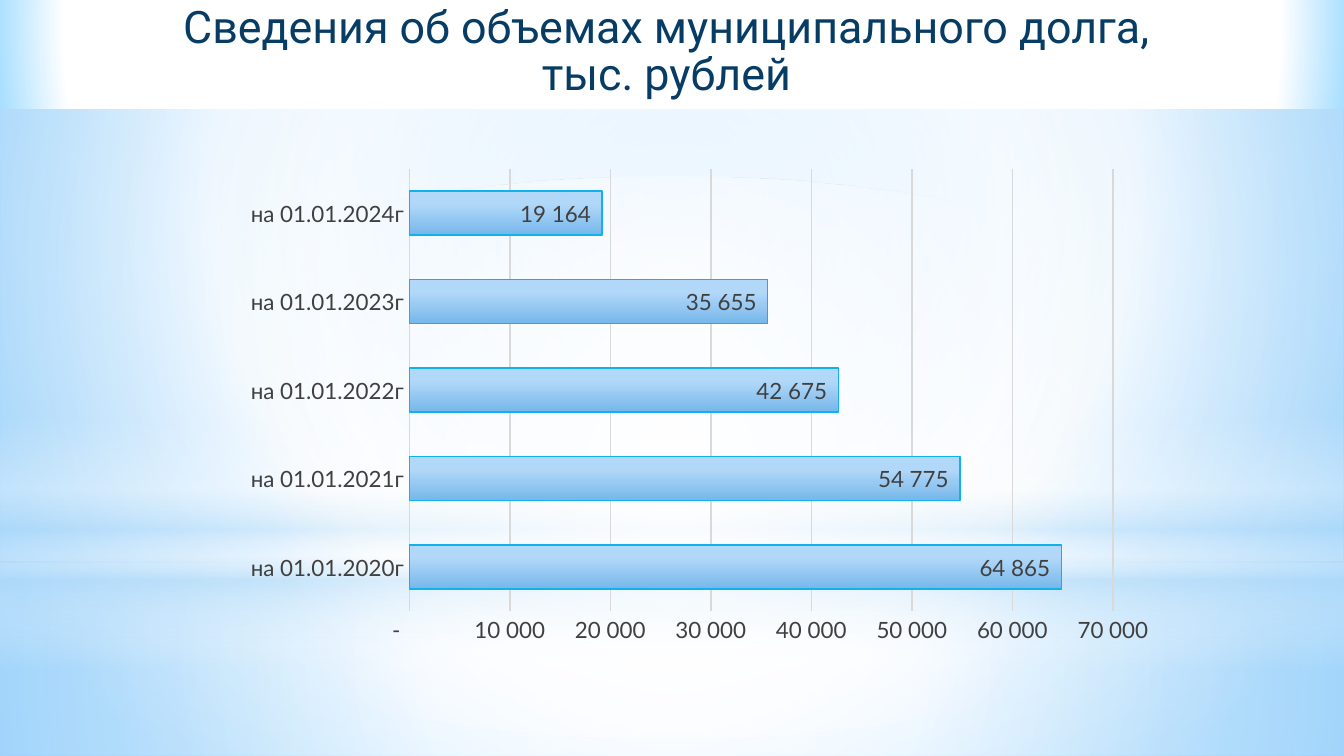
from lxml import etree
from pptx import Presentation
from pptx.chart.data import CategoryChartData
from pptx.dml.color import RGBColor
from pptx.enum.chart import XL_CHART_TYPE, XL_LABEL_POSITION, XL_TICK_MARK
from pptx.enum.shapes import MSO_SHAPE
from pptx.enum.text import MSO_ANCHOR, MSO_AUTO_SIZE, PP_ALIGN
from pptx.oxml import parse_xml
from pptx.oxml.ns import nsdecls, qn
from pptx.util import Pt

BARS = XL_CHART_TYPE.BAR_CLUSTERED
IN_END = XL_LABEL_POSITION.INSIDE_END
NO_TICK = XL_TICK_MARK.NONE
RECT, OVAL = MSO_SHAPE.RECTANGLE, MSO_SHAPE.OVAL
MIDDLE, CENTER = MSO_ANCHOR.MIDDLE, PP_ALIGN.CENTER
GROW = MSO_AUTO_SIZE.SHAPE_TO_FIT_TEXT

WIDE, HIGH = 720, 405
HEX = {
    "white": "FFFFFF", "sky": "9ED5FF", "blue": "5BB9FF", "haze": "B4DCFA",
    "edge": "AADFFF", "navy": "073C65", "text": "404040", "grid": "D9D9D9",
    "light": "B2D8F9", "deep": "76B7EA", "line": "11B2EB", "black": "000000",
}
HEAD, BODY = "Roboto", "Lato"
MID = (50, 50, 50, 50)
TOP = (20, 10, 20, 60)
MASK = '_-* #\\ ##0_-;\\-* #\\ ##0_-;_-* "-"??_-;_-@_-'
DEBT = [(2020, 64865), (2021, 54775), (2022, 42675), (2023, 35655), (2024, 19164)]
TITLE = ["Сведения об объемах муниципального долга, ", "тыс. рублей "]

BANDS = [
    (RECT, (0, 301.5, WIDE, 103.5),
     [(0, "white", 91), (37, "white", 76), (100, "haze", 79)], MID),
    (RECT, (0, 0, WIDE, 301.5),
     [(0, "white", 89), (48, "white", 62), (100, "haze", 79)], MID),
    (RECT, (0, 222.5, WIDE, 135),
     [(0, "white", 0), (29, "white", 30), (45, "haze", 40),
      (55, "white", 26), (65, "haze", 60), (100, "white", 0)], None),
    (OVAL, (0, 94.5, WIDE, 301.5),
     [(0, "white", 100), (56, "white", 0)], MID),
]


def color(name):
    return RGBColor.from_string(HEX[name])


def blend(fill, node, stops, focus=None):
    fill.gradient()
    grad = node.find(".//" + qn("a:gradFill"))
    for part in list(grad):
        grad.remove(part)
    row = etree.SubElement(grad, qn("a:gsLst"))
    for pos, name, alpha in stops:
        stop = etree.SubElement(row, qn("a:gs"), pos=str(pos * 1000))
        tone = etree.SubElement(stop, qn("a:srgbClr"), val=HEX[name])
        if alpha < 100:
            etree.SubElement(tone, qn("a:alpha"), val=str(alpha * 1000))
    if focus:
        way = etree.SubElement(grad, qn("a:path"), path="circle")
        sides = {side: str(cut * 1000) for side, cut in zip("ltrb", focus)}
        etree.SubElement(way, qn("a:fillToRect"), **sides)
    else:
        etree.SubElement(grad, qn("a:lin"), ang="5400000", scaled="0")


def style(font, size, name, face):
    font.size = Pt(size)
    font.name = face
    font.color.rgb = color(name)


def stroke(line, name):
    line.color.rgb = color(name)
    line.width = Pt(0.75)


def add_back(slide):
    blend(slide.background.fill, slide.element,
          [(0, "sky", 75), (60, "white", 100), (100, "blue", 100)], TOP)
    for kind, box, stops, focus in BANDS:
        band = slide.shapes.add_shape(kind, *map(Pt, box))
        band.shadow.inherit = False
        band.line.fill.background()
        blend(band.fill, band.element, stops, focus)


def add_title(slide, box):
    title = slide.shapes.title
    title.left, title.top, title.width, title.height = map(Pt, box)
    slide.shapes.element.append(title.element)
    blend(title.fill, title.element, [(90, "white", 100), (100, "edge", 100)], TOP)
    frame = title.text_frame
    frame.word_wrap = True
    frame.auto_size = GROW
    frame.vertical_anchor = MIDDLE
    for i, words in enumerate(TITLE):
        para = frame.add_paragraph() if i else frame.paragraphs[0]
        para.alignment = CENTER
        para.line_spacing = Pt(25)
        para.space_before = Pt(0)
        run = para.add_run()
        run.text = words
        style(run.font, 24, "navy", HEAD)


def set_plot(chart, box):
    area = chart.element.find(".//" + qn("c:plotArea")) if hasattr(chart, "element") \
        else chart._chartSpace.find(".//" + qn("c:plotArea"))
    old = area.find(qn("c:layout"))
    if old is not None:
        area.remove(old)
    rows = "".join(f'<c:{key} val="{val}"/>' for key, val in zip("xywh", box))
    area.insert(0, parse_xml(
        f'<c:layout {nsdecls("c")}><c:manualLayout><c:layoutTarget val="inner"/>'
        f'<c:xMode val="edge"/><c:yMode val="edge"/>{rows}'
        '</c:manualLayout></c:layout>'))


def add_bars(slide, box):
    data = CategoryChartData()
    data.categories = [f"на 01.01.{year}г" for year, _ in DEBT]
    data.add_series("Series 1", [debt for _, debt in DEBT])
    chart = slide.shapes.add_chart(BARS, *map(Pt, box), data).chart
    chart.has_title = chart.has_legend = False
    style(chart.font, 10, "black", BODY)
    set_plot(chart, (0.19, 0.01, 0.75, 0.89))

    cats, vals = chart.category_axis, chart.value_axis
    for axis in (cats, vals):
        axis.major_tick_mark = axis.minor_tick_mark = NO_TICK
        style(axis.tick_labels.font, 12, "text", BODY)
    cats.has_major_gridlines = False
    stroke(cats.format.line, "grid")
    vals.minimum_scale, vals.maximum_scale, vals.major_unit = 0, 70000, 10000
    vals.format.line.fill.background()
    vals.has_major_gridlines = True
    stroke(vals.major_gridlines.format.line, "grid")

    plot = chart.plots[0]
    plot.gap_width = 100
    plot.vary_by_categories = False
    bars = plot.series[0]
    blend(bars.format.fill, bars._element, [(28, "light", 100), (100, "deep", 100)])
    stroke(bars.format.line, "line")
    tags = bars.data_labels
    tags.show_value = True
    tags.position = IN_END
    style(tags.font, 12, "text", BODY)
    for part in (tags, vals.tick_labels):
        part.number_format = MASK
        part.number_format_is_linked = False


def main():
    deck = Presentation()
    deck.slide_width, deck.slide_height = Pt(WIDE), Pt(HIGH)
    slide = deck.slides.add_slide(deck.slide_layouts[5])
    add_back(slide)
    add_title(slide, (-0.5, -0.5, 721, 57.6))
    add_bars(slide, (123.8, 87.8, 502.6, 266.4))
    deck.save("out.pptx")


if __name__ == "__main__":
    main()
